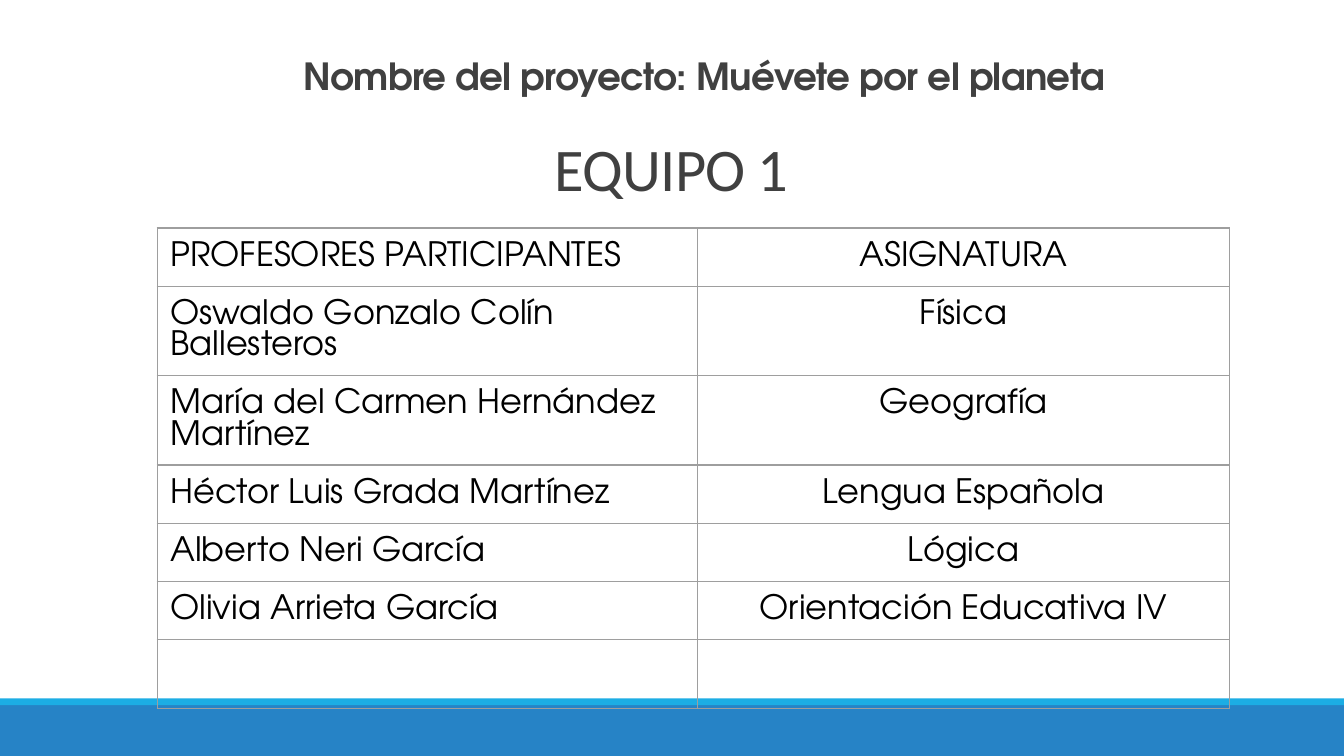
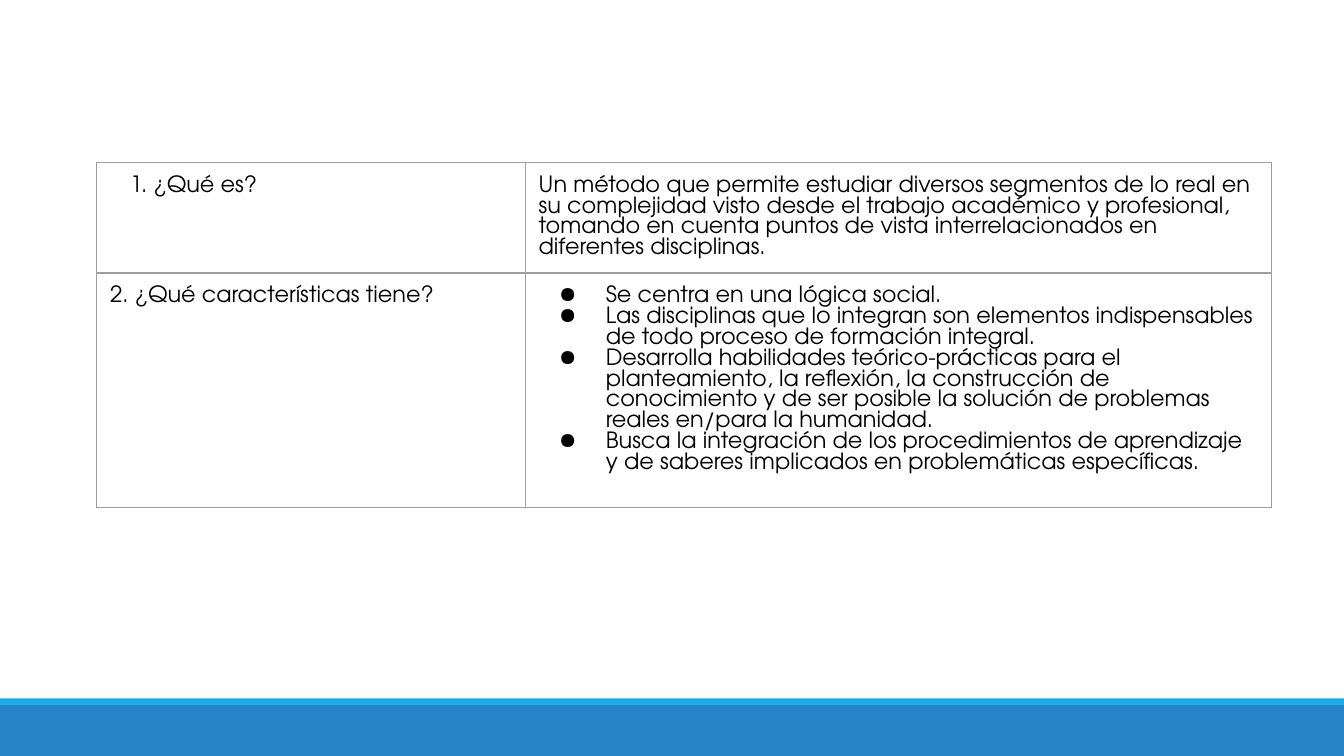
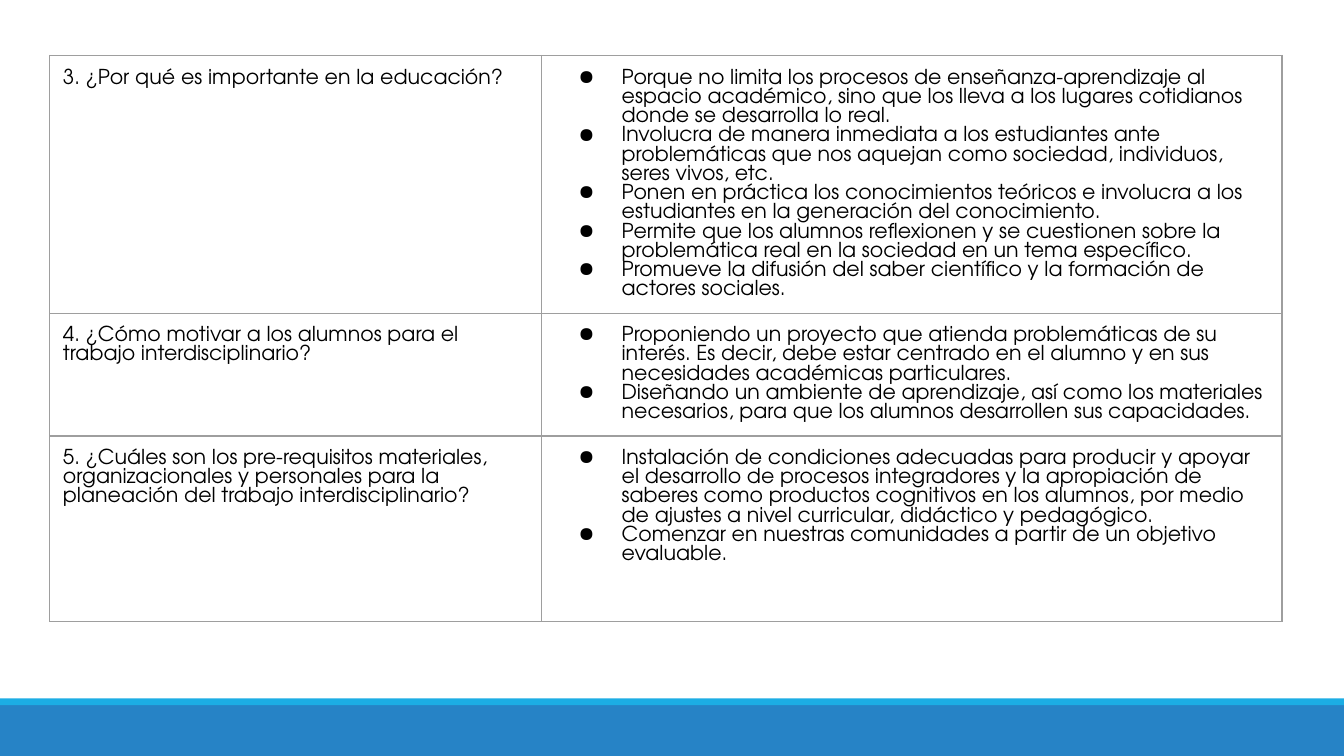
"""Build three slides that present an interdisciplinary school project."""
from lxml import etree
from pptx import Presentation
from pptx.dml.color import RGBColor
from pptx.enum.shapes import MSO_SHAPE
from pptx.enum.text import MSO_ANCHOR, PP_ALIGN
from pptx.oxml.ns import qn
from pptx.util import Cm, Pt

RECTANGLE = MSO_SHAPE.RECTANGLE
TOP, BOTTOM = MSO_ANCHOR.TOP, MSO_ANCHOR.BOTTOM
LEFT, CENTER = PP_ALIGN.LEFT, PP_ALIGN.CENTER

BODY_FONT, TITLE_FONT = "TeX Gyre Adventor", "Calibri"
WHITE, BLACK, GRAY, BORDER = "FFFFFF", "000000", "404040", "9E9E9E"
PAGE_WIDTH, PAGE_HEIGHT = 25.4, 14.29
INSET = 0.25
BULLET_LEFT = 1.27

BANDS = [
    {"top": 13.33, "height": 0.96, "color": "2683C6"},
    {"top": 13.2, "height": 0.13, "color": "1CADE4"},
]

TITLES = [
    {"text": "EQUIPO 1", "place": (0.86, 2.44, 23.67, 1.6), "anchor": TOP,
     "font": {"name": TITLE_FONT, "size": Pt(32.4), "bold": False}},
    {"text": "Nombre del proyecto: Muévete por el planeta",
     "place": (1.47, 0.38, 23.67, 1.73), "anchor": BOTTOM,
     "font": {"name": BODY_FONT, "size": Pt(20), "bold": True}},
]

TEACHERS = {
    "place": (2.97, 4.31), "columns": (10.21, 10.06),
    "heights": (1.1, 1.69, 1.69, 1.1, 1.1, 1.1, 1.3),
    "size": 18, "aligns": (LEFT, CENTER), "filled_rows": 0,
    "rows": [
        ("PROFESORES PARTICIPANTES", "ASIGNATURA"),
        ("Oswaldo Gonzalo Colín Ballesteros", "Física"),
        ("María del Carmen Hernández Martínez", "Geografía"),
        ("Héctor Luis Grada Martínez", "Lengua Española"),
        ("Alberto Neri García", "Lógica"),
        ("Olivia Arrieta García", "Orientación Educativa IV"),
        ("", ""),
    ],
}

DEFINITION = {
    "place": (1.83, 3.07), "columns": (8.1, 14.1), "heights": (2.09, 4.44),
    "size": 12, "aligns": (LEFT, LEFT), "filled_rows": 2,
    "hanging": 0.89, "first_indent": 0.38,
    "rows": [
        ("1. ¿Qué es?",
         "Un método que permite estudiar diversos segmentos de lo real en su complejidad visto "
         "desde el trabajo académico y profesional, tomando en cuenta puntos de vista "
         "interrelacionados en diferentes disciplinas."),
        ("2. ¿Qué características tiene?", [
            "Se centra en una lógica social.",
            "Las disciplinas que lo integran son elementos indispensables de todo proceso de "
            "formación integral.",
            "Desarrolla habilidades teórico-prácticas para el planteamiento, la reflexión, la "
            "construcción de conocimiento y de ser posible la solución de problemas reales "
            "en/para la humanidad.",
            "Busca la integración de los procedimientos de aprendizaje y de saberes implicados "
            "en problemáticas específicas.",
        ]),
    ],
}

PRACTICE = {
    "place": (0.94, 1.05), "columns": (9.29, 14.0), "heights": (4.87, 2.32, 3.5),
    "size": 11, "aligns": (LEFT, LEFT), "filled_rows": 1, "hanging": 0.82,
    "rows": [
        ("3. ¿Por qué es importante en la educación?", [
            "Porque no limita los procesos de enseñanza-aprendizaje al espacio académico, sino "
            "que los lleva a los lugares cotidianos donde se desarrolla lo real.",
            "Involucra de manera inmediata a los estudiantes ante problemáticas que nos aquejan "
            "como sociedad, individuos, seres vivos, etc.",
            "Ponen en práctica los conocimientos teóricos e involucra a los estudiantes en la "
            "generación del conocimiento.",
            "Permite que los alumnos reflexionen y se cuestionen sobre la problemática real en "
            "la sociedad en un tema específico.",
            "Promueve la difusión del saber científico y la formación de actores sociales.",
        ]),
        ("4. ¿Cómo motivar a los alumnos para el trabajo interdisciplinario?", [
            "Proponiendo un proyecto que atienda problemáticas de su interés. Es decir, debe "
            "estar centrado en el alumno y en sus necesidades académicas particulares.",
            "Diseñando un ambiente de aprendizaje, así como los materiales necesarios, para que "
            "los alumnos desarrollen sus capacidades.",
        ]),
        ("5. ¿Cuáles son los pre-requisitos materiales, organizacionales y personales para la "
         "planeación del trabajo interdisciplinario?", [
            "Instalación de condiciones adecuadas para producir y apoyar el desarrollo de "
            "procesos integradores y la apropiación de saberes como productos cognitivos en los "
            "alumnos, por medio de ajustes a nivel curricular, didáctico y pedagógico.",
            "Comenzar en nuestras comunidades a partir de un objetivo evaluable.",
        ]),
    ],
}

PAGES = [(TEACHERS, TITLES), (DEFINITION, []), (PRACTICE, [])]


def rgb(color):
    """Turn a hex string into a colour."""
    return RGBColor.from_string(color)


def apply(target, values):
    """Set each named attribute of the target."""
    for name, value in values.items():
        setattr(target, name, value)


def set_margins(target):
    """Give a text frame or a cell equal margins."""
    sides = ("left", "top", "right", "bottom")
    apply(target, {f"margin_{side}": Cm(INSET) for side in sides})


def add_rectangle(page, place, color):
    """Add a plain filled rectangle."""
    box = page.shapes.add_shape(RECTANGLE, *map(Cm, place))
    box.shadow.inherit = False
    box.fill.solid()
    box.fill.fore_color.rgb = rgb(color)
    box.line.fill.background()
    return box


def write(para, text, font, color):
    """Add one formatted run to a paragraph."""
    span = para.add_run()
    span.text = text
    apply(span.font, font)
    span.font.color.rgb = rgb(color)
    return span


def add_title(page, title):
    """Add a centred, slightly condensed heading."""
    box = add_rectangle(page, title["place"], WHITE)
    frame = box.text_frame
    apply(frame, {"word_wrap": True, "vertical_anchor": title["anchor"]})
    set_margins(frame)
    para = frame.paragraphs[0]
    apply(para, {"alignment": CENTER, "line_spacing": 0.85})
    span = write(para, title["text"], title["font"], GRAY)
    span.font._element.set("spc", "-40")


def set_indent(para, left, first):
    """Set the left margin and first-line indent of a paragraph."""
    properties = para._p.get_or_add_pPr()
    properties.set("marL", str(Cm(left)))
    properties.set("indent", str(Cm(first)))
    return properties


def add_bullet(para, hanging):
    """Give a paragraph a round black bullet."""
    properties = set_indent(para, BULLET_LEFT, -hanging)
    color = etree.SubElement(properties, qn("a:buClr"))
    etree.SubElement(color, qn("a:srgbClr"), val=BLACK)
    etree.SubElement(properties, qn("a:buChar"), char="●")


def add_borders(cell):
    """Draw a thin gray line on all four sides of a cell."""
    properties = cell._tc.get_or_add_tcPr()
    for side in ("lnL", "lnR", "lnT", "lnB"):
        line = etree.SubElement(properties, qn(f"a:{side}"), w=str(Pt(0.75)))
        fill = etree.SubElement(line, qn("a:solidFill"))
        etree.SubElement(fill, qn("a:srgbClr"), val=BORDER)


def fill_cell(cell, content, align, data, filled):
    """Format a cell and write its text or its bulleted list."""
    set_margins(cell)
    add_borders(cell)
    if filled:
        cell.fill.solid()
        cell.fill.fore_color.rgb = rgb(WHITE)
    else:
        cell.fill.background()
    bulleted = isinstance(content, list)
    font = {"name": BODY_FONT, "size": Pt(data["size"]), "bold": False}
    for index, text in enumerate(content if bulleted else [content]):
        frame = cell.text_frame
        para = frame.add_paragraph() if index else frame.paragraphs[0]
        para.alignment = align
        if bulleted:
            add_bullet(para, data["hanging"])
        if text:
            write(para, text, font, BLACK)


def add_grid(page, data):
    """Add a bordered table."""
    columns, heights = data["columns"], data["heights"]
    size = (sum(columns), sum(heights))
    frame = page.shapes.add_table(len(heights), len(columns), *map(Cm, data["place"] + size))
    table = frame.table
    apply(table, {"first_row": False, "horz_banding": False})
    for column, width in zip(table.columns, columns):
        column.width = Cm(width)
    for index, (row, height) in enumerate(zip(table.rows, heights)):
        row.height = Cm(height)
        filled = index < data["filled_rows"]
        for cell, content, align in zip(row.cells, data["rows"][index], data["aligns"]):
            fill_cell(cell, content, align, data, filled)
    if "first_indent" in data:
        set_indent(table.cell(0, 0).text_frame.paragraphs[0], data["first_indent"], 0)


def main():
    """Build and save the deck."""
    deck = Presentation()
    apply(deck, {"slide_width": Cm(PAGE_WIDTH), "slide_height": Cm(PAGE_HEIGHT)})
    for data, titles in PAGES:
        page = deck.slides.add_slide(deck.slide_layouts[6])
        for band in BANDS:
            add_rectangle(page, (0, band["top"], PAGE_WIDTH, band["height"]), band["color"])
        for title in titles:
            add_title(page, title)
        add_grid(page, data)
    deck.save("out.pptx")


if __name__ == "__main__":
    main()
